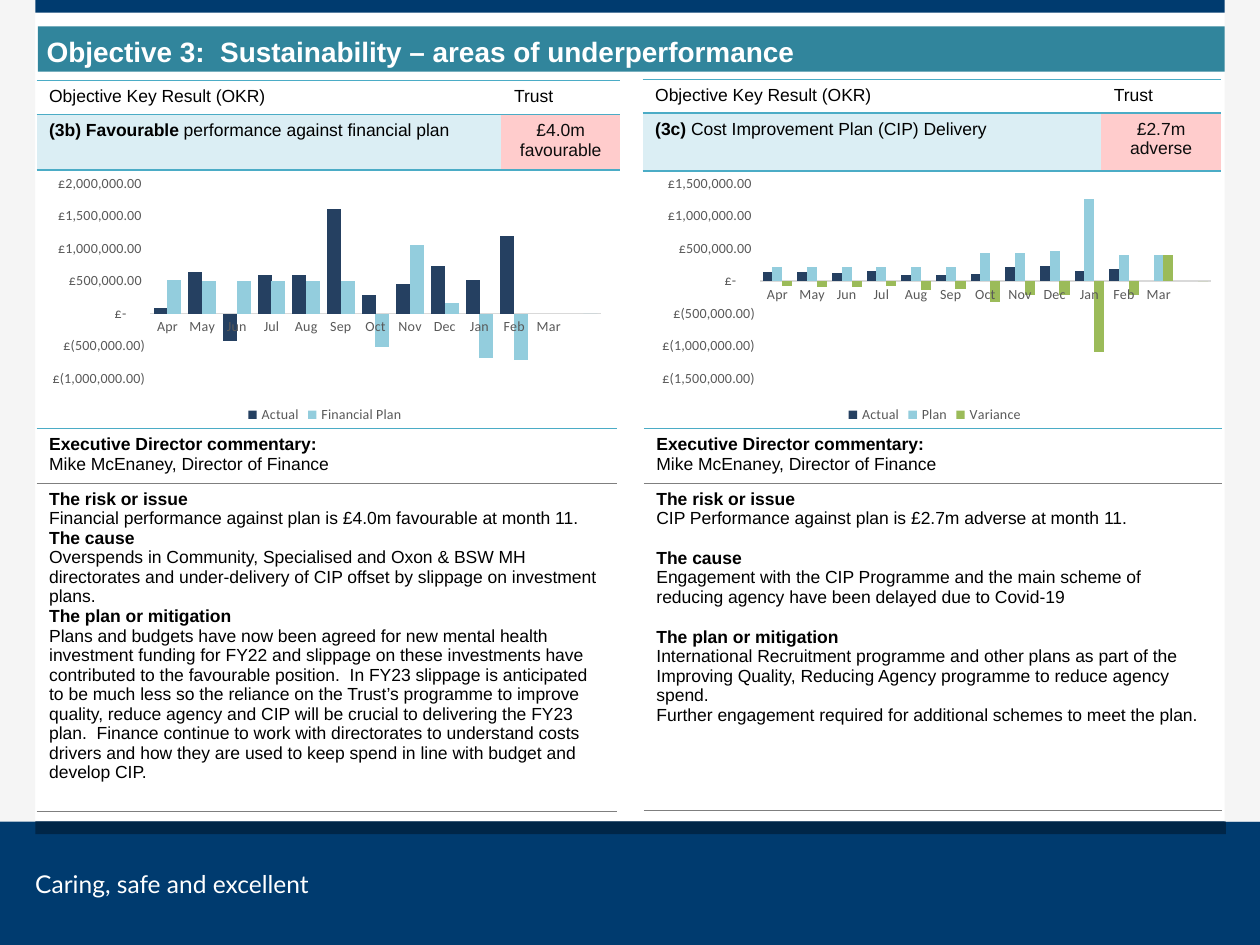
from lxml import etree
from pptx import Presentation
from pptx import util as u
from pptx.chart.data import CategoryChartData
from pptx.dml.color import RGBColor
from pptx.enum import chart as charts, shapes, text
from pptx.oxml.ns import qn

NAVY, DARK, TEAL = "003B6F", "002648", "4BACC6"
BLUE_TINT, RED_TINT, GREY = "DBEEF4", "FFCCCC", "7F7F7F"
PLAIN_TABLE = "{2D5ABB26-0587-4C30-8999-92F81FD0307C}"
MONEY = '_("£"* #,##0.00_);_("£"* \\(#,##0.00\\);_("£"* "-"??_);_(@_)'
MONTHS = "Apr May Jun Jul Aug Sep Oct Nov Dec Jan Feb Mar".split() + [""]
SERIES_COLOURS = ["254061", "93CDDD", "9BBB59"]
DIRECTOR = [("Executive Director commentary:", True), ("Mike McEnaney, Director of Finance", False)]


def colour(hex_text):
    return RGBColor.from_string(hex_text)


def inches(*lengths):
    return [u.Inches(length) for length in lengths]


def format_font(font, size=10, name="Arial", fill="000000", bold=False):
    font.size, font.name, font.bold = u.Pt(size), name, bold
    font.color.rgb = colour(fill)


def add_text(paragraph, words, **style):
    run = paragraph.add_run()
    run.text = words
    format_font(run.font, **style)


def add_band(slide, box, fill):
    band = slide.shapes.add_shape(shapes.MSO_SHAPE.RECTANGLE, *inches(*box))
    band.shadow.inherit = False
    band.fill.solid()
    band.fill.fore_color.rgb = colour(fill)
    band.line.fill.background()


def add_tagline(slide):
    frame = slide.shapes.add_textbox(*inches(0.28, 6.9, 3.07, 0.24)).text_frame
    frame.margin_left = frame.margin_right = frame.margin_top = frame.margin_bottom = 0
    frame.word_wrap = True
    add_text(frame.paragraphs[0], "Caring, safe and excellent", size=14, name="Lato", fill="FFFFFF")


def set_title(slide, words):
    title = slide.shapes.title
    title.left, title.top, title.width, title.height = inches(0.3, 0.21, 9.43, 0.36)
    title.fill.solid()
    title.fill.fore_color.rgb = colour("31859C")
    frame = title.text_frame
    frame.auto_size = text.MSO_AUTO_SIZE.NONE
    frame.vertical_anchor = text.MSO_ANCHOR.MIDDLE
    frame.margin_left = frame.margin_right = u.Inches(0.07)
    frame.margin_top = frame.margin_bottom = u.Inches(0.04)
    paragraph = frame.paragraphs[0]
    paragraph.alignment = text.PP_ALIGN.LEFT
    paragraph.line_spacing = 1.15
    paragraph.space_before, paragraph.space_after = u.Pt(0), u.Pt(7.5)
    add_text(paragraph, words, size=16, fill="FFFFFF", bold=True)


def add_table(slide, left, top, columns, rows):
    frame = slide.shapes.add_table(
        len(rows), len(columns), *inches(left, top, sum(columns), sum(rows)))
    table = frame.table
    table.first_row = table.horz_banding = False
    table._tbl.tblPr.find(qn("a:tableStyleId")).text = PLAIN_TABLE
    for column, width in zip(table.columns, columns):
        column.width = u.Inches(width)
    for row, height in zip(table.rows, rows):
        row.height = u.Inches(height)
    return table


def style_cell(cell, fill, **borders):
    if fill:
        cell.fill.solid()
        cell.fill.fore_color.rgb = colour(fill)
    else:
        cell.fill.background()
    properties = cell._tc.get_or_add_tcPr()
    for index, (side, (line_colour, width)) in enumerate(borders.items()):
        line = etree.Element(qn("a:" + side), w=str(u.Pt(width)))
        solid = etree.SubElement(line, qn("a:solidFill"))
        etree.SubElement(solid, qn("a:srgbClr"), val=line_colour)
        properties.insert(index, line)


def add_key_result(slide, left, top, columns, rows, result, value):
    table = add_table(slide, left, top, columns, rows)
    line = (TEAL, 1)
    for column, heading in enumerate(["Objective Key Result (OKR)", "Trust"]):
        cell = table.cell(0, column)
        add_text(cell.text_frame.paragraphs[0], heading)
        style_cell(cell, None, lnT=line, lnB=line)
    for column, fill in enumerate([BLUE_TINT, RED_TINT]):
        style_cell(table.cell(1, column), fill, lnT=line, lnB=line)
    paragraph = table.cell(1, 0).text_frame.paragraphs[0]
    for words, bold in result:
        add_text(paragraph, words, bold=bold)
    paragraph = table.cell(1, 1).text_frame.paragraphs[0]
    paragraph.alignment = text.PP_ALIGN.CENTER
    add_text(paragraph, value, fill="0D0D0D")


def add_commentary(slide, left, width, sections, gap):
    table = add_table(slide, left, 3.4, [width], [0.43, 2.6])
    lines = [(words, bold, 0) for words, bold in DIRECTOR]
    details = []
    for index, (heading, *body) in enumerate(sections):
        details.append((heading, True, gap if index else 0))
        details += [(words, False, 0) for words in body]
    thin = (GREY, 0.5)
    for row, (content, top_line) in enumerate([(lines, (TEAL, 0.75)), (details, thin)]):
        cell = table.cell(row, 0)
        style_cell(cell, "FFFFFF" if row else None, lnT=top_line, lnB=thin)
        for index, (words, bold, space) in enumerate(content):
            frame = cell.text_frame
            paragraph = frame.add_paragraph() if index else frame.paragraphs[0]
            if space:
                paragraph.space_before = u.Pt(space)
            add_text(paragraph, words, bold=bold)


def add_column_chart(slide, left, low, high, series):
    data = CategoryChartData(number_format=MONEY)
    data.categories = MONTHS
    for name, thousands in series.items():
        data.add_series(name, [None if v is None else v * 1000 for v in thousands])
    chart = slide.shapes.add_chart(
        charts.XL_CHART_TYPE.COLUMN_CLUSTERED, *inches(left, 1.35, 4.56, 2.05), data).chart
    chart.has_title = False
    chart.has_legend = True
    chart.legend.position = charts.XL_LEGEND_POSITION.BOTTOM
    chart.legend.include_in_layout = False
    months, amounts = chart.category_axis, chart.value_axis
    for font in (chart.font, chart.legend.font, months.tick_labels.font, amounts.tick_labels.font):
        format_font(font, size=8, name="Calibri", fill="595959")
    for axis in (months, amounts):
        axis.major_tick_mark = axis.minor_tick_mark = charts.XL_TICK_MARK.NONE
        axis.has_major_gridlines = False
    months.format.line.color.rgb = colour("D9D9D9")
    months.format.line.width = u.Pt(0.75)
    amounts.format.line.fill.background()
    amounts.minimum_scale, amounts.maximum_scale = low, high
    amounts.major_unit = 500000
    amounts.tick_labels.number_format = MONEY
    amounts.tick_labels.number_format_is_linked = False
    plot = chart.plots[0]
    plot.gap_width, plot.overlap, plot.vary_by_categories = 50, 3, False
    for columns, fill in zip(plot.series, SERIES_COLOURS):
        columns.invert_if_negative = False
        columns.format.fill.solid()
        columns.format.fill.fore_color.rgb = colour(fill)


def main():
    presentation = Presentation()
    presentation.slide_width, presentation.slide_height = inches(10, 7.5)
    slide = presentation.slides.add_slide(presentation.slide_layouts[5])
    for box, fill in [((0, 0, 0.28, 6.52), "F5F5F5"), ((0, 6.52, 10, 0.98), NAVY),
                      ((0.28, 6.52, 9.45, 0.1), DARK), ((0.28, 0, 9.45, 0.1), NAVY),
                      ((9.72, 0, 0.28, 6.52), "F5F5F5")]:
        add_band(slide, box, fill)
    add_tagline(slide)
    set_title(slide, "Objective 3:  Sustainability – areas of underperformance")
    add_key_result(slide, 0.29, 0.64, [3.69, 0.94], [0.27, 0.44],
                   [("(3b) Favourable", True), (" performance against financial plan", False)],
                   "£4.0m favourable")
    add_key_result(slide, 5.1, 0.63, [3.64, 0.95], [0.26, 0.46],
                   [("(3c) ", True), ("Cost Improvement Plan (CIP) Delivery", False)],
                   "£2.7m adverse")
    add_commentary(slide, 5.11, 4.59, [
        ("The risk or issue", "CIP Performance against plan is £2.7m adverse at month 11."),
        ("The cause", "Engagement with the CIP Programme and the main scheme of reducing agency have been delayed due to Covid-19"),
        ("The plan or mitigation",
         "International Recruitment programme and other plans as part of the Improving Quality, Reducing Agency programme to reduce agency spend.",
         "Further engagement required for additional schemes to meet the plan.")], 11.5)
    add_commentary(slide, 0.29, 4.61, [
        ("The risk or issue", "Financial performance against plan is £4.0m favourable at month 11."),
        ("The cause", "Overspends in Community, Specialised and Oxon & BSW MH directorates and under-delivery of CIP offset by slippage on investment plans."),
        ("The plan or mitigation",
         "Plans and budgets have now been agreed for new mental health investment funding for FY22 and slippage on these investments have contributed to the favourable position.  "
         "In FY23 slippage is anticipated to be much less so the reliance on the Trust’s programme to improve quality, reduce agency and CIP will be crucial to delivering the FY23 plan.  "
         "Finance continue to work with directorates to understand costs drivers and how they are used to keep spend in line with budget and develop CIP.")], 0)
    add_column_chart(slide, 5.14, -1500000, 1500000, {
        "Actual": [140, 140, 130, 150, 100, 100, 110, 210, 240, 160, 180, None, None],
        "Plan": [220, 220, 220, 220, 220, 220, 430, 430, 460, 1260, 400, 400, None],
        "Variance": [-80, -90, -90, -70, -130, -120, -330, -220, -220, -1100, -210, 400, 0]})
    add_column_chart(slide, 0.3, -1000000, 2000000, {
        "Actual": [90, 640, -430, 600, 600, 1610, 290, 460, 730, 520, 1200, None, None],
        "Financial Plan": [510, 500, 500, 500, 500, 500, -520, 1060, 160, -680, -710, None, 0]})
    presentation.save("out.pptx")


if __name__ == "__main__":
    main()
